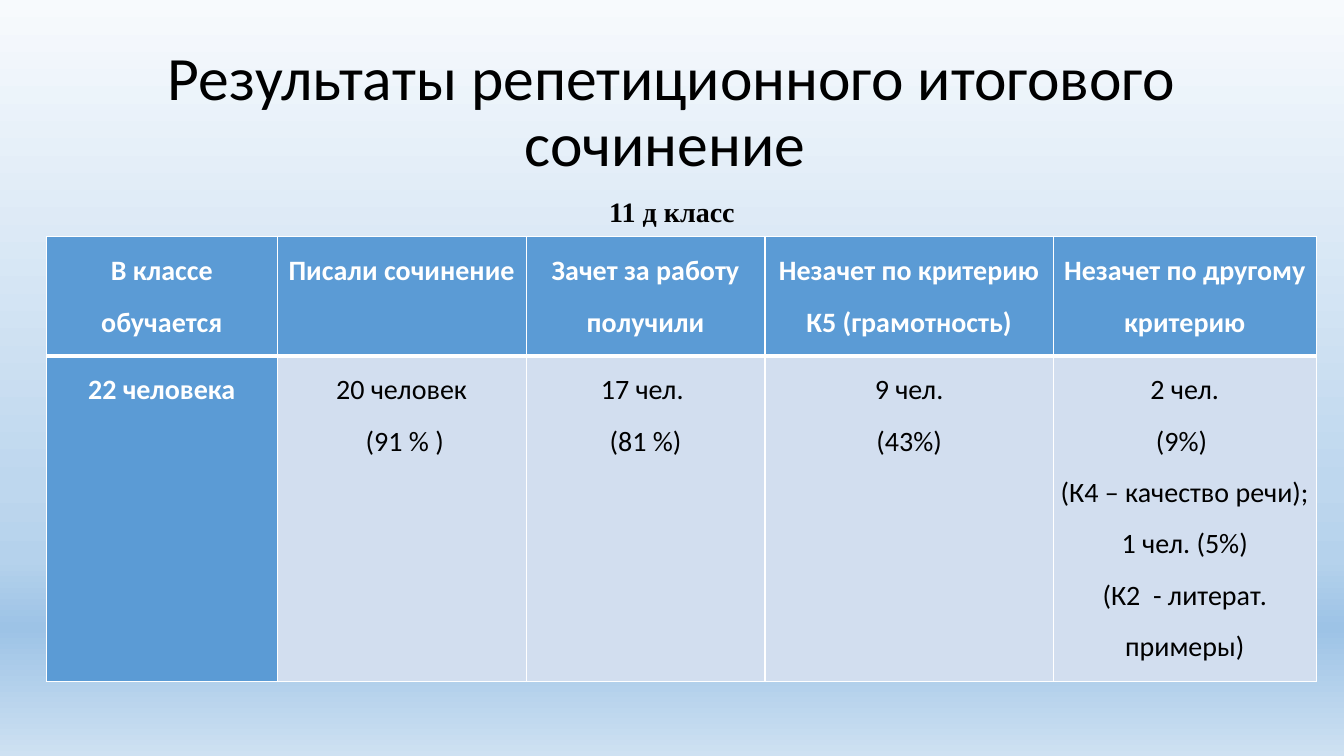
from lxml import etree
from pptx import Presentation
from pptx.enum import text
from pptx.oxml import ns
from pptx.util import Pt
from pptx.dml.color import RGBColor

TITLE = "Результаты репетиционного итогового сочинение "
CLASS_NAME = "11 д класс"
RESULTS = [
    ("В классе обучается", ["22 человека"]),
    ("Писали сочинение", ["20 человек", " (91 % )"]),
    ("Зачет за работу получили", ["17 чел. ", "(81 %)"]),
    ("Незачет по критерию К5 (грамотность)", ["9 чел.", "(43%)"]),
    ("Незачет по другому критерию",
     ["2 чел.", "(9%) ", "(К4 – качество речи);", " 1 чел. (5%) ", "(К2  - литерат. примеры)"]),
]
COLUMN_WIDTHS = [164.88, 177.84, 170.64, 205.92, 187.92]
ROW_HEIGHTS = [84.96, 232.56]
COLORS = {"ink": "000000", "white": "FFFFFF", "accent": "5B9BD5", "pale": "D2DEEF"}
BACKDROP = {0: "F7FAFD", 64: "BED7EE", 74: "B5D2EC", 83: "9DC3E6", 100: "CEE1F2"}
CELL_FORMAT = {"margin_left": Pt(5.04), "margin_right": Pt(5.04),
               "margin_top": 0, "margin_bottom": 0}


def add_node(parent, tag, **attributes):
    node = etree.SubElement(parent, ns.qn(tag))
    for key, value in attributes.items():
        node.set(key, str(value))
    return node


def apply(target, values):
    for key, value in values.items():
        setattr(target, key, value)


def write(frame, lines, size, color, font="Calibri", bold=False, spacing=1.0):
    for index, line in enumerate(lines):
        paragraph = frame.paragraphs[0] if index == 0 else frame.add_paragraph()
        apply(paragraph, {"alignment": text.PP_ALIGN.CENTER, "line_spacing": spacing})
        run = paragraph.add_run()
        run.text = line
        apply(run.font, {"name": font, "size": Pt(size), "bold": bold})
        run.font.color.rgb = RGBColor.from_string(COLORS[color])


def add_heading(slide, box, line, wrap, **style):
    frame = slide.shapes.add_textbox(*map(Pt, box)).text_frame
    apply(frame, {"word_wrap": wrap, "vertical_anchor": text.MSO_ANCHOR.MIDDLE})
    write(frame, [line], **style)


def paint_backdrop(slide):
    fill = slide.background.fill
    fill.gradient()
    fill.gradient_angle = 270
    stops = next(slide.element.iter(ns.qn("a:gsLst")))
    for stop in list(stops):
        stops.remove(stop)
    for position, color in BACKDROP.items():
        stop = add_node(stops, "a:gs", pos=position * 1000)
        add_node(stop, "a:srgbClr", val=color)


def add_borders(cell, widths):
    properties = cell._tc.get_or_add_tcPr()
    for index, (side, width) in enumerate(widths.items()):
        border = etree.Element(ns.qn(f"a:ln{side}"), w=str(int(Pt(width))))
        properties.insert(index, border)
        add_node(add_node(border, "a:solidFill"), "a:srgbClr", val=COLORS["white"])


def add_results(slide):
    table = slide.shapes.add_table(
        len(ROW_HEIGHTS), len(RESULTS), Pt(33.12), Pt(169.2),
        Pt(sum(COLUMN_WIDTHS)), Pt(sum(ROW_HEIGHTS))).table
    for row, height in zip(table.rows, ROW_HEIGHTS):
        row.height = Pt(height)
    for column, (heading, values) in enumerate(RESULTS):
        table.columns[column].width = Pt(COLUMN_WIDTHS[column])
        for row, lines in enumerate([[heading], values]):
            cell = table.cell(row, column)
            strong = row == 0 or column == 0
            apply(cell, CELL_FORMAT)
            cell.fill.solid()
            cell.fill.fore_color.rgb = RGBColor.from_string(COLORS["accent" if strong else "pale"])
            write(cell.text_frame, lines, 20, "white" if strong else "ink",
                  bold=strong, spacing=1.5)
            add_borders(cell, {"L": 1, "R": 1, "T": 3 if row else 1, "B": 1 if row else 3})


def main():
    deck = Presentation()
    apply(deck, {"slide_width": Pt(960), "slide_height": Pt(540)})
    slide = deck.slides.add_slide(deck.slide_layouts[6])
    paint_backdrop(slide)
    add_heading(slide, (66, 28.8, 828, 104.4), TITLE, True, size=44, color="ink", spacing=0.9)
    add_results(slide)
    add_heading(slide, (0, 133.2, 960, 36), CLASS_NAME, False,
                size=20, color="ink", font="Times New Roman", bold=True)
    deck.save("out.pptx")


if __name__ == "__main__":
    main()
